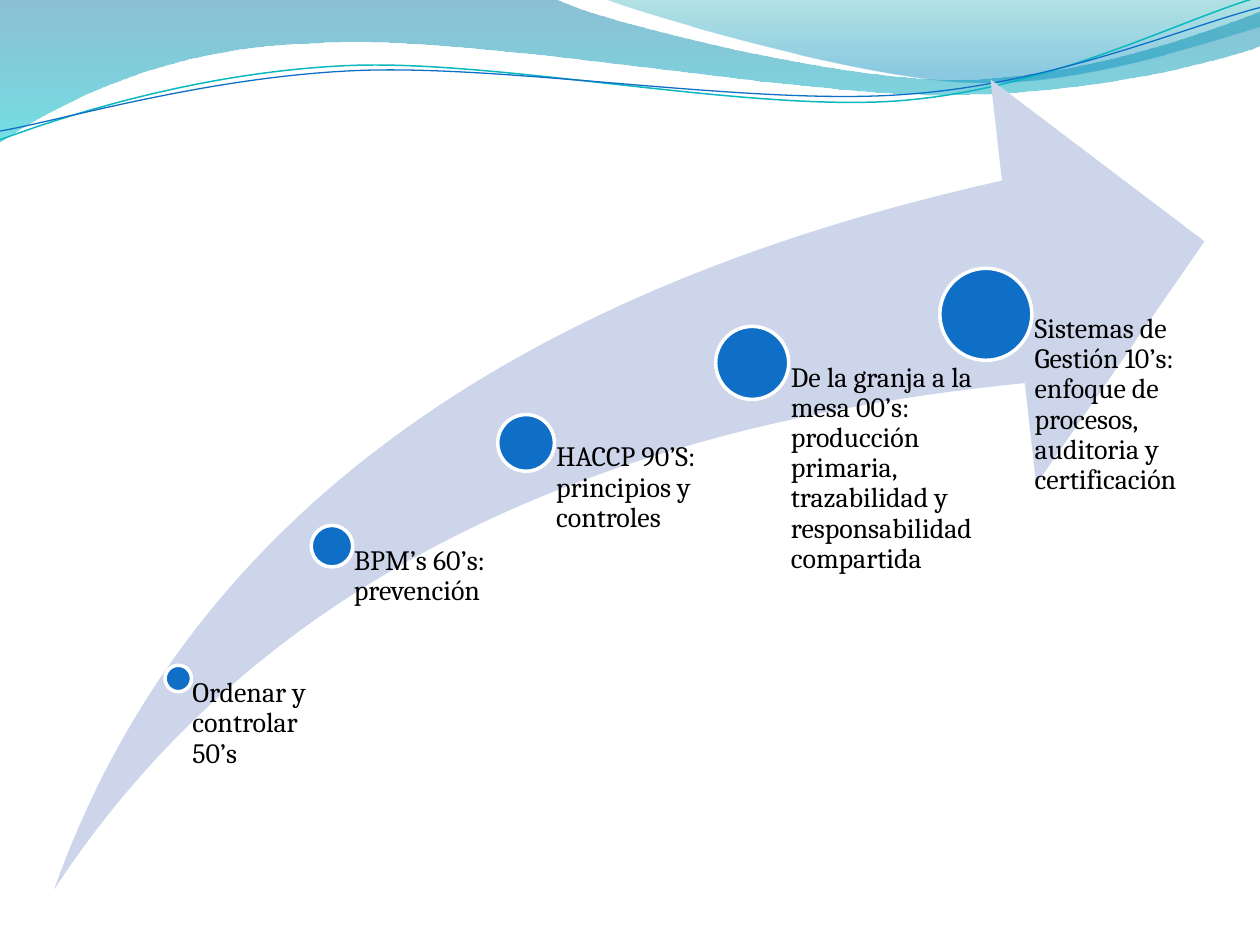
import math
import pptx
import pptx.util
import pptx.dml.color
import pptx.enum.shapes
import pptx.oxml.ns
import lxml.etree

Inches = pptx.util.Inches
Pt = pptx.util.Pt
kinds = pptx.enum.shapes.MSO_SHAPE
qn = pptx.oxml.ns.qn


def color(text):
    return pptx.dml.color.RGBColor.from_string(text)


def trace(start, parts, close):
    spots = [start]
    for part in parts:
        spots += zip(part[::2], part[1::2])
    spots = [(Inches(x), Inches(y)) for x, y in spots]
    maker = slide.shapes.build_freeform(*spots[0])
    maker.add_line_segments(spots[1:], close=close)
    shape = maker.convert_to_shape()
    shape.shadow.inherit = False
    lines = iter(list(shape._element.spPr.iter(qn("a:lnTo"))))
    for part in parts:
        first = next(lines)
        if len(part) == 6:
            curve = lxml.etree.Element(qn("a:cubicBezTo"))
            first.addprevious(curve)
            for line in (first, next(lines), next(lines)):
                curve.append(line[0])
                line.getparent().remove(line)
    return shape


deck = pptx.Presentation()
deck.slide_width = Inches(10)
deck.slide_height = Inches(7.5)
slide = deck.slides.add_slide(deck.slide_layouts[6])

waves = [
    ((0, 0), [
        (4.4, -0.01),
        (4.76, 0.17, 6.64, 0.63, 7.58, 0.63),
        (8.53, 0.63, 9.58, 0.26, 10, 0.09),
        (10.01, 0.36),
        (9.83, 0.44, 8.7, 0.76, 7.46, 0.75),
        (6.22, 0.75, 3.82, 0.28, 2.57, 0.34),
        (1.29, 0.36, 0.46, 0.83, -0.01, 1.13),
    ], [("0074A1", 0, 45), ("00C6CF", 1, 55)]),
    ((4.79, -0.01), [
        (5.09, 0.11, 6.82, 0.62, 7.69, 0.65),
        (8.56, 0.69, 9.61, 0.32, 10, 0.21),
        (10, 0),
    ], [("00A1A9", 0, 30), ("008BBF", 0.8, 45)]),
]
for start, parts, stops in waves:
    wave = trace(start, parts, True)
    wave.line.fill.background()
    wave.fill.gradient()
    wave.fill.gradient_angle = 270
    for stop, (shade, place, alpha) in zip(wave.fill.gradient_stops, stops):
        stop.color.rgb = color(shade)
        stop.position = place
    marks = list(wave._element.spPr.iter(qn("a:srgbClr")))
    for mark, (shade, place, alpha) in zip(marks, stops):
        node = lxml.etree.SubElement(mark, qn("a:alpha"))
        node.set("val", str(alpha * 1000))

strands = [
    ((4.99, 0.575), [
        (0, 1.11),
        (0.48, 0.93, 1.58, 0.57, 2.77, 0.52),
        (3.95, 0.47, 5.93, 0.89, 7.13, 0.8),
        (8.33, 0.71, 9.38, 0.15, 9.98, -0.02),
    ], "0AB8BF", 0.85),
    ((4.995, 0.59), [
        (0, 1.04),
        (0.47, 0.96, 1.64, 0.61, 2.83, 0.56),
        (4.03, 0.51, 5.97, 0.84, 7.17, 0.75),
        (8.36, 0.67, 9.41, 0.21, 10, 0.06),
    ], "0F6FC6", 0.75),
]
tilt = 2.7
cos, sin = math.cos(math.radians(tilt)), math.sin(math.radians(tilt))
for (mid_x, mid_y), parts, shade, width in strands:
    turned = []
    for part in parts:
        spots = []
        for x, y in zip(part[::2], part[1::2]):
            dx, dy = x - mid_x, y - mid_y
            spots += [mid_x + dx * cos - dy * sin, mid_y + dx * sin + dy * cos]
        turned.append(tuple(spots))
    strand = trace(turned[0], turned[1:], False)
    strand.rotation = 360 - tilt
    strand.fill.background()
    strand.line.color.rgb = color(shade)
    strand.line.width = Pt(width)

arrow = slide.shapes.add_shape(
    kinds.SWOOSH_ARROW, Inches(0.43), Inches(0.63), Inches(9.13), Inches(6.43))
arrow.adjustments[0] = 0.25
arrow.adjustments[1] = 0.25
arrow.shadow.inherit = False
arrow.fill.solid()
arrow.fill.fore_color.rgb = color("CCD5EA")
arrow.line.fill.background()

stages = [
    (1.31, 5.28, 0.21, 1.22, "Ordenar y controlar 50’s"),
    (2.47, 4.17, 0.33, 1.54, "BPM’s 60’s: prevención"),
    (3.95, 3.29, 0.45, 1.79, "HACCP 90’S: principios y controles"),
    (5.68, 2.59, 0.58, 1.86, "De la granja a la mesa 00’s: producción primaria, "
     "trazabilidad y responsabilidad compartida"),
    (7.46, 2.13, 0.73, 1.86, "Sistemas de Gestión 10’s: enfoque de procesos, "
     "auditoria y certificación"),
]
base = 6.77
for left, top, size, width, words in stages:
    dot = slide.shapes.add_shape(
        kinds.OVAL, Inches(left), Inches(top), Inches(size), Inches(size))
    dot.shadow.inherit = False
    dot.fill.solid()
    dot.fill.fore_color.rgb = color("0F6FC6")
    dot.line.color.rgb = color("FFFFFF")
    dot.line.width = Pt(2)

    x, y = left + size / 2, top + size / 2
    label = slide.shapes.add_textbox(
        Inches(x), Inches(y), Inches(width), Inches(base - y))
    frame = label.text_frame
    frame.word_wrap = True
    frame.margin_left = Inches(size * 0.53)
    frame.margin_top = frame.margin_right = frame.margin_bottom = 0
    para = frame.paragraphs[0]
    para.text = words
    para.line_spacing = 0.9
    para.font.name = "Cambria"
    para.font.size = Pt(16)
    para.font.color.rgb = color("000000")

deck.save("out.pptx")
